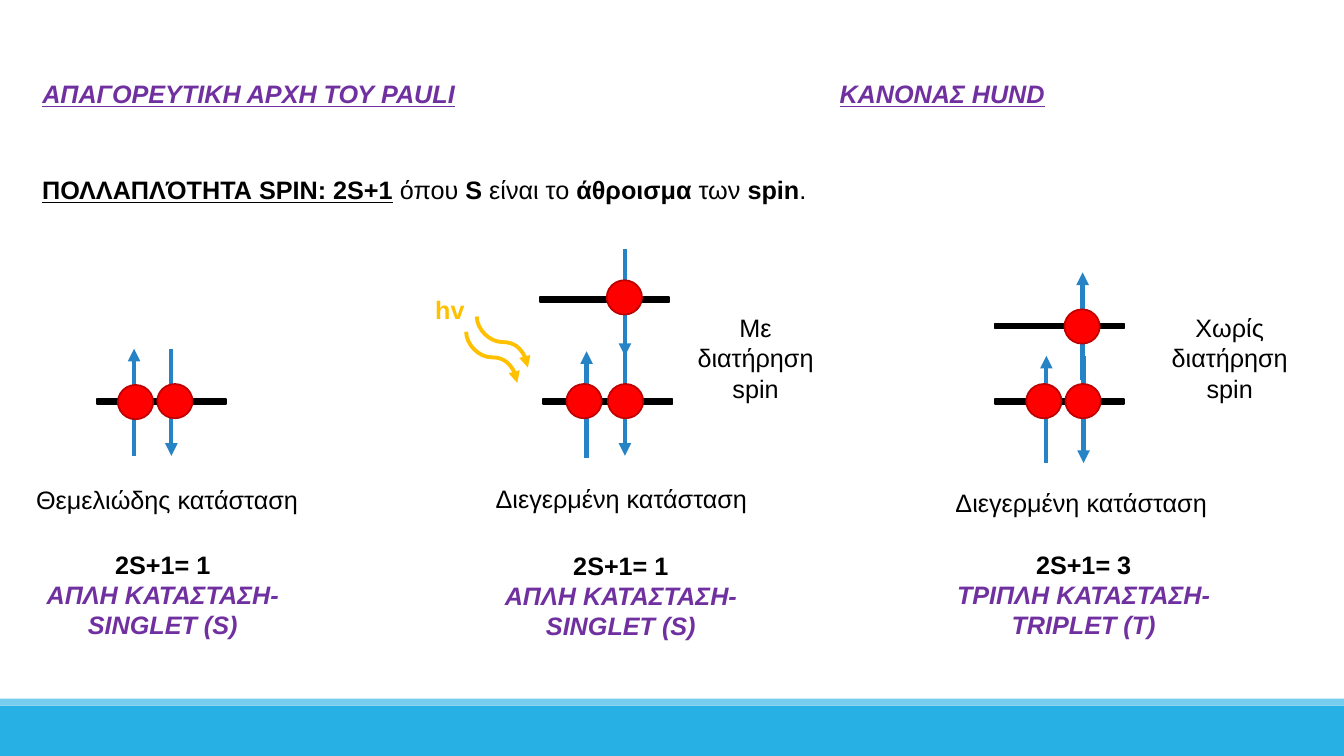
from dataclasses import dataclass

import pptx
import pptx.dml.color
import pptx.enum.shapes
import pptx.enum.text
import pptx.oxml.ns
import pptx.util
from lxml import etree

Pt = pptx.util.Pt
qn = pptx.oxml.ns.qn
Shape = pptx.enum.shapes.MSO_SHAPE
Connector = pptx.enum.shapes.MSO_CONNECTOR
Align = pptx.enum.text.PP_ALIGN


@dataclass(frozen=True)
class Theme:
    font: str = "Arial"
    size: float = 18
    ink: str = "000000"
    accent: str = "7030A0"
    spin: str = "2683C6"
    electron: str = "FF0000"
    electron_edge: str = "C00000"
    light: str = "FFC000"
    band: str = "27B0E4"
    stripe: str = "76CDEE"
    edge_width: float = 1.25
    spin_width: float = 3
    light_width: float = 2.75


@dataclass(frozen=True)
class Spin:
    """An arrow at x from its top edge, and the left and top of its electron."""
    x: float
    top: float
    up: bool
    electron: tuple


@dataclass(frozen=True)
class State:
    levels: tuple
    spins: tuple
    caption: str
    caption_box: tuple
    multiplicity: str
    name: str
    name_box: tuple


THEME = Theme()
WIDTH, HEIGHT = 960, 540
LEVEL_SIZE = (92.2, 3.6)
ELECTRON_SIZE = (25.2, 24.5)
SPIN_LENGTH = 76.5
PHOTON_SPAN = 36.5
HEADING_SIZE = (331.2, 60.5)

STATES = (
    State(
        levels=((69.1, 285.1),),
        spins=(Spin(95.8, 249.1, True, (84.2, 275)),
               Spin(122.4, 249.1, False, (112.3, 274.3))),
        caption="Θεμελιώδης κατάσταση", caption_box=(18.7, 342.7, 207.4, 28.8),
        multiplicity="2S+1= 1", name="ΑΠΛΗ ΚΑΤΑΣΤΑΣΗ- SINGLET (S)",
        name_box=(-12.2, 388.8, 257, 94.3)),
    State(
        levels=((388.1, 285.1), (385.9, 212.4)),
        spins=(Spin(419, 250.9, True, (404.6, 274.3)),
               Spin(446.4, 177.8, False, (433.4, 200.2)),
               Spin(446.4, 249.1, False, (434.2, 274.3))),
        caption="Διεγερμένη κατάσταση", caption_box=(347, 342, 213.8, 28.8),
        multiplicity="2S+1= 1", name="ΑΠΛΗ ΚΑΤΑΣΤΑΣΗ- SINGLET (S)",
        name_box=(313.2, 389.5, 260.6, 72.7)),
    State(
        levels=((710.6, 285.1), (710.6, 231.1)),
        spins=(Spin(747.4, 254.2, True, (733, 274.3)),
               Spin(773.3, 194.6, True, (760.3, 221)),
               Spin(774, 254.2, False, (761, 274.3))),
        caption="Διεγερμένη κατάσταση", caption_box=(675.4, 344.9, 221, 28.8),
        multiplicity="2S+1= 3", name="ΤΡΙΠΛΗ ΚΑΤΑΣΤΑΣΗ- TRIPLET (T)",
        name_box=(639.4, 388.8, 269.3, 72.7)),
)


def rgb(value):
    return pptx.dml.color.RGBColor.from_string(value)


def add_run(paragraph, text, color=THEME.ink, bold=False, italic=False, underline=False):
    run = paragraph.add_run()
    run.text = text
    font = run.font
    font.name, font.size = THEME.font, Pt(THEME.size)
    font.bold, font.italic, font.underline = bold, italic, underline
    font.color.rgb = rgb(color)


def add_text(slide, box, align=Align.LEFT):
    """Add a wrapping text box and return its text frame."""
    frame = slide.shapes.add_textbox(*map(Pt, box)).text_frame
    frame.word_wrap = True
    frame.paragraphs[0].alignment = align
    return frame


def add_label(slide, text, box, align=Align.LEFT, **style):
    add_run(add_text(slide, box, align).paragraphs[0], text, **style)


def write_heading(frame, text):
    frame.word_wrap = True
    frame.auto_size = pptx.enum.text.MSO_AUTO_SIZE.NONE
    frame.vertical_anchor = pptx.enum.text.MSO_ANCHOR.TOP
    paragraph = frame.paragraphs[0]
    paragraph.alignment = Align.LEFT
    paragraph.line_spacing = 3.0
    add_run(paragraph, text, THEME.accent, bold=True, italic=True, underline=True)


def add_figure(slide, preset, position, size, fill, edge=None):
    figure = slide.shapes.add_shape(preset, *map(Pt, (*position, *size)))
    figure.shadow.inherit = False
    figure.fill.solid()
    figure.fill.fore_color.rgb = rgb(fill)
    if edge is None:
        figure.line.fill.background()
    else:
        figure.line.color.rgb = rgb(edge)
        figure.line.width = Pt(THEME.edge_width)


def add_arrow(slide, kind, start, end, color, width):
    arrow = slide.shapes.add_connector(kind, *map(Pt, (*start, *end)))
    arrow.line.color.rgb = rgb(color)
    arrow.line.width = Pt(width)
    properties = arrow._element.spPr
    etree.SubElement(properties.find(qn("a:ln")), qn("a:tailEnd"), type="triangle")
    etree.SubElement(properties, qn("a:effectLst"))
    return arrow


def add_spin(slide, spin):
    ends = [(spin.x, spin.top), (spin.x, spin.top + SPIN_LENGTH)]
    if spin.up:
        ends.reverse()
    add_arrow(slide, Connector.STRAIGHT, *ends, THEME.spin, THEME.spin_width)


def add_photon(slide, left, top):
    """Add a wavy arrow to the lower right that leaves and arrives vertically."""
    photon = add_arrow(slide, Connector.CURVE, (left + PHOTON_SPAN, top),
                       (left, top + PHOTON_SPAN), THEME.light, THEME.light_width)
    photon._element.spPr.find(qn("a:xfrm")).set("rot", str(270 * 60000))


def add_state(slide, state):
    for level in state.levels:
        add_figure(slide, Shape.RECTANGLE, level, LEVEL_SIZE, THEME.ink, THEME.ink)
    for spin in state.spins:
        add_spin(slide, spin)
    for spin in state.spins:
        add_figure(slide, Shape.OVAL, spin.electron, ELECTRON_SIZE,
                   THEME.electron, THEME.electron_edge)
    add_label(slide, state.caption, state.caption_box)
    frame = add_text(slide, state.name_box, Align.CENTER)
    add_run(frame.paragraphs[0], state.multiplicity, bold=True)
    name = frame.add_paragraph()
    name.alignment = Align.CENTER
    add_run(name, state.name, THEME.accent, bold=True, italic=True)


def add_headings(slide):
    title = slide.shapes.title
    title.left, title.top, title.width, title.height = map(Pt, (23, 9.4, *HEADING_SIZE))
    write_heading(title.text_frame, "ΑΠΑΓΟΡΕΥΤΙΚΗ ΑΡΧΗ ΤΟΥ PAULI")
    write_heading(add_text(slide, (592.6, 9.4, *HEADING_SIZE)), "ΚΑΝΟΝΑΣ HUND")


def add_definition(slide):
    definition = add_text(slide, (23, 121, 565.2, 28.8)).paragraphs[0]
    add_run(definition, "ΠΟΛΛΑΠΛΌΤΗΤΑ SPIN: 2S+1", bold=True, underline=True)
    for text, bold in ((" ", True), ("όπου ", False), ("S ", True), ("είναι το ", False),
                       ("άθροισμα", True), (" των ", False), ("spin", True), (".", False)):
        add_run(definition, text, bold=bold)


def main():
    deck = pptx.Presentation()
    deck.slide_width, deck.slide_height = Pt(WIDTH), Pt(HEIGHT)
    slide = deck.slides.add_slide(deck.slide_layouts.get_by_name("Title Only"))

    add_figure(slide, Shape.RECTANGLE, (0, 504), (WIDTH, 36), THEME.band)
    add_figure(slide, Shape.RECTANGLE, (0, 499), (WIDTH, 5), THEME.stripe)
    add_headings(slide)
    add_definition(slide)
    for state in STATES:
        add_state(slide, state)

    add_photon(slide, 333, 237)
    add_photon(slide, 340.6, 226.1)
    add_label(slide, "hv", (303.8, 206.6, 36.7, 28.8), color=THEME.light, bold=True)
    add_label(slide, "Με διατήρηση spin", (488.2, 219.6, 103, 72.7), Align.CENTER)
    add_label(slide, "Χωρίς διατήρηση spin", (828, 219.6, 100.8, 72.7), Align.CENTER)
    deck.save("out.pptx")


if __name__ == "__main__":
    main()
